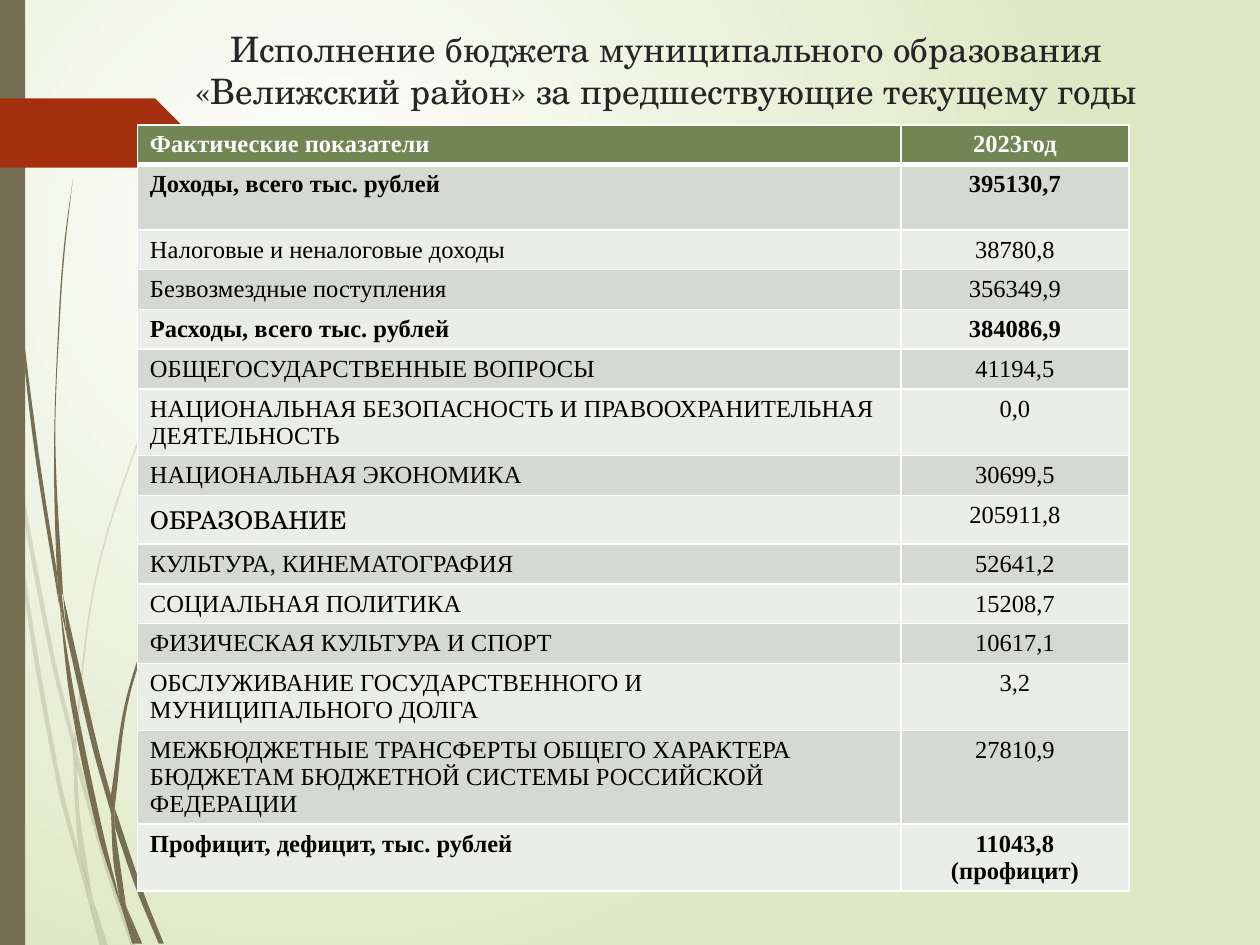
from dataclasses import dataclass
from math import dist

from lxml import etree
from pptx import Presentation
from pptx import util as u
from pptx.dml.color import RGBColor
from pptx.enum import shapes, text
from pptx.oxml.ns import qn


@dataclass(frozen=True)
class Theme:
    stem: str = "766F54"
    accent: str = "A53010"
    ground: tuple = ("FFFFFF", "DFE8C4")
    header: str = "728653"
    bands: tuple = ("D5D9D1", "EBEDE9")
    white: str = "FFFFFF"
    ink: str = "000000"
    title_ink: str = "262626"
    title_font: str = "TeX Gyre Schola"
    body_font: str = "Times New Roman"
    title_size: int = 20
    body_size: int = 14


THEME = Theme()
WIDTH, HEIGHT = 10, 7.5
TITLE = ("Исполнение бюджета муниципального образования "
         "«Велижский район» за предшествующие текущему годы")
BUDGET = [
    ("Фактические показатели", "2023год"),
    ("Доходы, всего тыс. рублей", "395130,7"),
    ("Налоговые и неналоговые доходы", "38780,8"),
    ("Безвозмездные поступления", "356349,9"),
    ("Расходы, всего тыс. рублей", "384086,9"),
    ("ОБЩЕГОСУДАРСТВЕННЫЕ ВОПРОСЫ", "41194,5"),
    ("НАЦИОНАЛЬНАЯ БЕЗОПАСНОСТЬ И ПРАВООХРАНИТЕЛЬНАЯ ДЕЯТЕЛЬНОСТЬ", "0,0"),
    ("НАЦИОНАЛЬНАЯ ЭКОНОМИКА", "30699,5"),
    ("ОБРАЗОВАНИЕ", "205911,8"),
    ("КУЛЬТУРА, КИНЕМАТОГРАФИЯ", "52641,2"),
    ("СОЦИАЛЬНАЯ ПОЛИТИКА", "15208,7"),
    ("ФИЗИЧЕСКАЯ КУЛЬТУРА И СПОРТ", "10617,1"),
    ("ОБСЛУЖИВАНИЕ ГОСУДАРСТВЕННОГО И МУНИЦИПАЛЬНОГО ДОЛГА", "3,2"),
    ("МЕЖБЮДЖЕТНЫЕ ТРАНСФЕРТЫ ОБЩЕГО ХАРАКТЕРА БЮДЖЕТАМ БЮДЖЕТНОЙ "
     "СИСТЕМЫ РОССИЙСКОЙ ФЕДЕРАЦИИ", "27810,9"),
    ("Профицит, дефицит, тыс. рублей", "11043,8 (профицит)"),
]
HEADER_ROW, INCOME_ROW, SPENDING_ROW, EDUCATION_ROW = 0, 1, 4, 8
BOLD_ROWS = {HEADER_ROW, INCOME_ROW, SPENDING_ROW, len(BUDGET) - 1}

# Blades of grass: the knots along one side, then back along the other, in inches
PALE_BLADES = [
    ([(0, 2.82), (.06, 3.22), (.08, 3.5)], [(.07, 3.44), (0, 2.99)]),
    ([(.1, 3.45), (.43, 5.2), (.59, 5.86)], [(.59, 5.99), (.4, 5.22), (.12, 3.76)]),
    ([(.61, 5.96), (.88, 6.92), (1.08, 7.51)], [(1.04, 7.51), (.85, 6.94), (.61, 6.1)]),
    ([(.73, 7.11), (.86, 7.51)], [(.83, 7.51)]),
    ([(.08, 3.5), (.22, 4.69), (.48, 6.19), (.64, 6.83), (.7, 7.14)],
     [(.64, 6.93), (.45, 6.21), (.19, 4.7), (.08, 3.5)]),
    ([(.58, 5.99), (.6, 6.46), (.64, 6.83), (.73, 7.11)], [(.63, 6.46), (.61, 6.08)]),
    ([(2.17, 1.53), (1.86, 1.97), (1.58, 2.44), (1.1, 3.48), (.75, 4.61), (.59, 5.84)],
     [(.61, 5.96), (.61, 5.84), (.76, 4.62), (1.11, 3.49), (1.59, 2.45), (1.87, 1.98),
      (2.17, 1.54)]),
    ([(.7, 7.14), (.79, 7.51)], [(.82, 7.51)]),
    ([(.58, 5.99), (.59, 5.86), (.61, 5.96)], [(.61, 6.1)]),
    ([(.65, 6.83), (.7, 7.14), (.82, 7.51)], [(.83, 7.51), (.73, 7.11)]),
]
DARK_BLADES = [
    ([(.02, 0), (.05, 1.1), (.14, 2.33), (.27, 3.55), (.47, 4.81)],
     [(.45, 4.53), (.3, 3.55), (.15, 2.32), (.06, 1.09), (.03, 0)]),
    ([(.5, 4.72), (.77, 5.9), (.88, 6.31)], [(.88, 6.45), (.73, 5.92), (.53, 5.05)]),
    ([(.91, 6.41), (1.13, 7.06), (1.3, 7.49)], [(1.26, 7.49), (1.09, 7.08), (.91, 6.56)]),
    ([(.47, 4.77), (.6, 5.56), (.81, 6.57), (.97, 7.22)],
     [(.92, 7.08), (.77, 6.59), (.56, 5.57), (.47, 4.77)]),
    ([(.58, 1.41), (.51, 1.93), (.47, 2.45), (.43, 3.49), (.45, 4.49), (.49, 4.72)],
     [(.5, 4.72), (.44, 3.49), (.48, 2.45), (.52, 1.93), (.58, 1.41)]),
    ([(1, 7.19), (1.13, 7.49)], [(1.1, 7.49)]),
    ([(.45, 4.49), (.47, 4.77), (.53, 5.05)], [(.49, 4.72)]),
    ([(2.16, 3.44), (1.91, 3.73), (1.68, 4.05), (1.29, 4.74), (1.01, 5.51), (.88, 6.31)],
     [(.91, 6.41), (1.03, 5.52), (1.31, 4.76), (1.69, 4.06), (1.91, 3.74), (2.16, 3.44)]),
    ([(.97, 7.22), (1.05, 7.49)], [(1.08, 7.49)]),
    ([(.88, 6.45), (.91, 6.91), (1, 7.19)], [(.91, 6.56), (.88, 6.45)]),
    ([(.88, 6.45), (.88, 6.31), (.91, 6.41)], [(.91, 6.56)]),
    ([(.91, 6.91), (.97, 7.22), (1.08, 7.49)], [(1.1, 7.49), (1, 7.19)]),
]
POINTER = [(0, .78), (1.23, .78), (1.5, 1.05), (1.23, 1.33), (0, 1.33)]


def inches(*lengths):
    return [u.Inches(length) for length in lengths]


def paint(shape, color, opacity=100):
    shape.shadow.inherit = False
    shape.fill.solid()
    shape.fill.fore_color.rgb = RGBColor.from_string(color)
    shape.line.fill.background()
    if opacity < 100:
        color_element = shape.element.spPr.find(".//" + qn("a:srgbClr"))
        etree.SubElement(color_element, qn("a:alpha"), val=str(opacity * 1000))


def set_font(paragraph, size, name, color, bold=False):
    font = paragraph.font
    font.size, font.name, font.bold = u.Pt(size), name, bold
    font.color.rgb = RGBColor.from_string(color)


def add_outline(slide, points):
    start, *others = [inches(*point) for point in points]
    builder = slide.shapes.build_freeform(*start)
    builder.add_line_segments(others, close=True)
    return builder.convert_to_shape()


def bend_sides(shape, split):
    """Turn the straight segments within each side into smooth curves."""
    outline = shape.element.find(".//" + qn("a:path"))
    knots = [(int(p.get("x")), int(p.get("y"))) for p in outline.iter(qn("a:pt"))]
    segments = outline.findall(qn("a:lnTo"))
    for first, last in ((0, split - 1), (split, len(knots) - 1)):
        for i in range(first, last):
            length = dist(knots[i], knots[i + 1]) / 3
            for place, (knot, sign) in enumerate(((i, 1), (i + 1, -1))):
                before, after = knots[max(knot - 1, first)], knots[min(knot + 1, last)]
                reach = sign * length / (dist(before, after) or 1)
                x, y = (round(k + (b - a) * reach)
                        for k, a, b in zip(knots[knot], before, after))
                handle = etree.Element(qn("a:pt"), x=str(x), y=str(y))
                segments[i].insert(place, handle)
            segments[i].tag = qn("a:cubicBezTo")


def add_background(slide):
    fill = slide.background.fill
    fill.gradient()
    for stop, color in zip(fill.gradient_stops, THEME.ground):
        stop.color.rgb = RGBColor.from_string(color)
    gradient = slide.element.find(".//" + qn("a:gradFill"))
    gradient.remove(gradient.find(qn("a:lin")))
    circle = etree.SubElement(gradient, qn("a:path"), path="circle")
    etree.SubElement(circle, qn("a:fillToRect"),
                     l="50000", t="50000", r="100000", b="100000")


def add_decoration(slide):
    for blades, opacity in ((PALE_BLADES, 20), (DARK_BLADES, 100)):
        for there, back in blades:
            blade = add_outline(slide, there + back)
            bend_sides(blade, len(there))
            paint(blade, THEME.stem, opacity)
    # Side strip and red pointer
    strip = slide.shapes.add_shape(
        shapes.MSO_SHAPE.RECTANGLE, *inches(0, 0, WIDTH * .02, HEIGHT))
    paint(strip, THEME.stem)
    paint(add_outline(slide, POINTER), THEME.accent)


def add_title(slide, box):
    title = slide.shapes.title
    title.left, title.top, title.width, title.height = inches(*box)
    title.element.getparent().append(title.element)  # above the decoration
    frame = title.text_frame
    frame.text, frame.word_wrap = TITLE, True
    frame.auto_size = text.MSO_AUTO_SIZE.NONE
    frame.vertical_anchor = text.MSO_ANCHOR.TOP
    paragraph = frame.paragraphs[0]
    paragraph.alignment = text.PP_ALIGN.CENTER
    set_font(paragraph, THEME.title_size, THEME.title_font, THEME.title_ink)


def set_borders(cell, bottom_width):
    properties = cell._tc.get_or_add_tcPr()
    for index, side in enumerate("LRTB"):
        width = bottom_width if side == "B" else 1
        line = etree.Element(qn("a:ln" + side), w=str(u.Pt(width)))
        fill = etree.SubElement(line, qn("a:solidFill"))
        etree.SubElement(fill, qn("a:srgbClr"), val=THEME.white)
        properties.insert(index, line)


def add_budget_table(slide, box):
    left, top, width, row_height = box
    table = slide.shapes.add_table(
        len(BUDGET), 2, *inches(left, top, width, row_height * len(BUDGET))).table
    for column, share in zip(table.columns, (.77, .23)):
        column.width = u.Inches(width * share)
    table.rows[INCOME_ROW].height = u.Inches(row_height * 2)
    for row, values in enumerate(BUDGET):
        is_header = row == HEADER_ROW
        band = THEME.header if is_header else THEME.bands[(row - 1) % 2]
        for column, value in enumerate(values):
            cell = table.cell(row, column)
            cell.text = value
            cell.fill.solid()
            cell.fill.fore_color.rgb = RGBColor.from_string(band)
            set_borders(cell, 3 if is_header else 1)
            paragraph = cell.text_frame.paragraphs[0]
            if column:
                paragraph.alignment = text.PP_ALIGN.CENTER
            is_education = (row, column) == (EDUCATION_ROW, 0)
            set_font(paragraph, THEME.body_size,
                     THEME.title_font if is_education else THEME.body_font,
                     THEME.white if is_header else THEME.ink, row in BOLD_ROWS)


presentation = Presentation()
presentation.slide_width, presentation.slide_height = inches(WIDTH, HEIGHT)
slide = presentation.slides.add_slide(
    presentation.slide_layouts.get_by_name("Title Only"))
add_background(slide)
add_decoration(slide)
add_title(slide, (1.33, .17, 7.92, .83))
add_budget_table(slide, (1.09, .99, 7.87, .26))
presentation.save("out.pptx")
